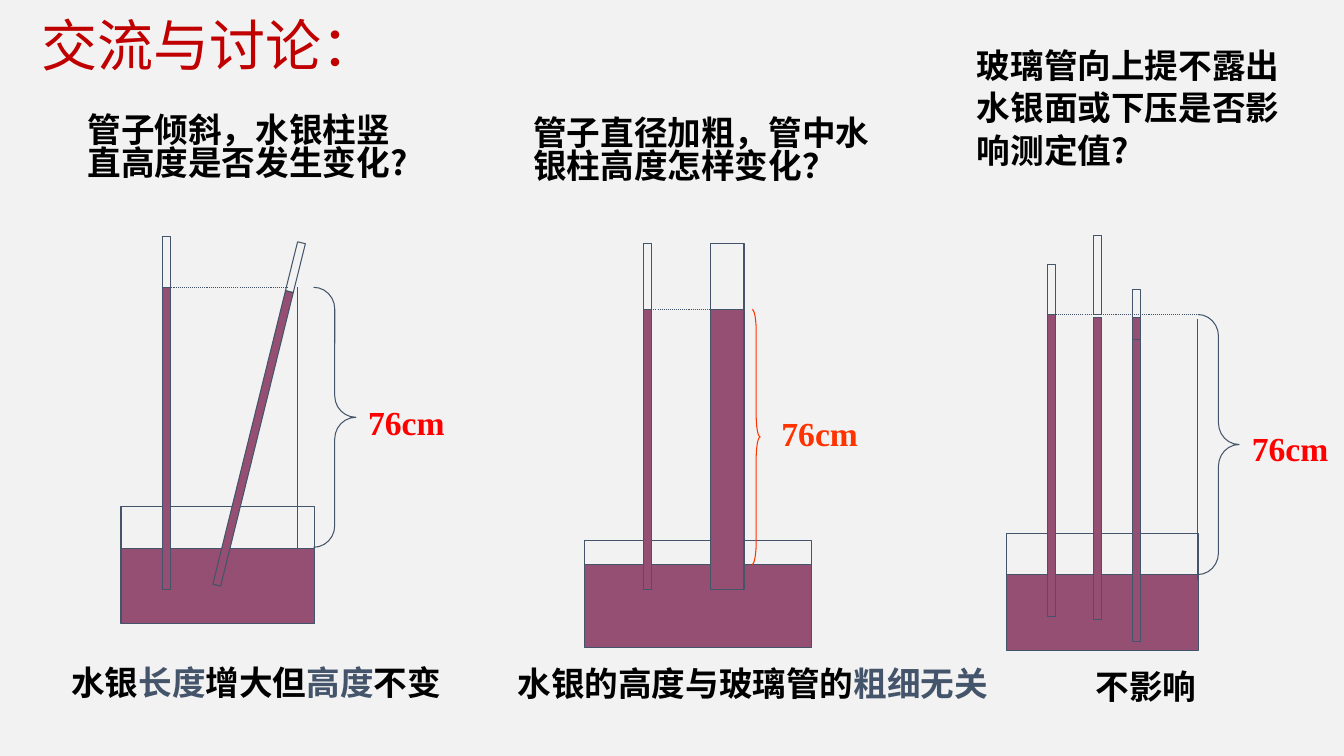
from dataclasses import dataclass
from math import cos, radians, sin

from lxml.etree import SubElement
from pptx import Presentation
from pptx.dml.color import RGBColor
from pptx.enum.dml import MSO_LINE_DASH_STYLE as Dash
from pptx.enum.shapes import MSO_CONNECTOR as Connector, MSO_SHAPE as Shape
from pptx.enum.text import MSO_ANCHOR as Anchor, MSO_AUTO_SIZE as AutoSize, PP_ALIGN as Align
from pptx.oxml.ns import qn
from pptx.util import Inches, Pt


@dataclass(frozen=True)
class Theme:
    """Colours, fonts and sizes of the slide."""
    background: str = "F2F2F2"
    mercury: str = "954F72"
    outline: str = "44546A"
    title: str = "C00000"
    text: str = "000000"
    red: str = "FF0000"
    orange: str = "FF3300"
    title_font: str = "Noto Sans CJK JP"
    body_font: str = "Noto Sans CJK SC"
    label_font: str = "Times New Roman"
    title_size: int = 40
    body_size: int = 24
    line_width: float = 0.75
    line_spacing: float = 0.82


@dataclass(frozen=True)
class Box:
    """A region in inches."""
    left: float
    top: float
    width: float
    height: float

    def inside(self, left, top, width, height):
        """Return a box placed relative to this one."""
        return Box(self.left + left, self.top + top, width, height)

    def lengths(self):
        """Return the four lengths for a shape."""
        return [Inches(value) for value in (self.left, self.top, self.width, self.height)]


THEME = Theme()


def style_run(run, color, font, size, bold):
    """Format a run for both Latin and East Asian letters."""
    run.font.size, run.font.bold, run.font.name = Pt(size), bold, font
    run.font.color.rgb = RGBColor.from_string(color)
    SubElement(run._r.get_or_add_rPr(), qn("a:ea")).set("typeface", font)


def add_text(slide, box, parts, align=Align.LEFT, font=THEME.body_font, spacing=THEME.line_spacing):
    """Add a bold text box from pairs of wording and colour."""
    frame = slide.shapes.add_textbox(*box.lengths()).text_frame
    frame.word_wrap = True
    paragraph = frame.paragraphs[0]
    paragraph.alignment, paragraph.line_spacing = align, spacing
    for wording, color in parts:
        run = paragraph.add_run()
        run.text = wording
        style_run(run, color, font, THEME.body_size, True)


def add_outline(slide, kind, box, fill=None, color=THEME.outline):
    """Add an outlined shape, filled on request."""
    shape = slide.shapes.add_shape(kind, *box.lengths())
    shape.shadow.inherit = False
    if fill:
        shape.fill.solid()
        shape.fill.fore_color.rgb = RGBColor.from_string(fill)
    else:
        shape.fill.background()
    shape.line.color.rgb = RGBColor.from_string(color)
    shape.line.width = Pt(THEME.line_width)
    return shape


def add_line(slide, box, dotted=False):
    """Add a straight line from the box's top left to its bottom right."""
    left, top, width, height = box.lengths()
    line = slide.shapes.add_connector(Connector.STRAIGHT, left, top, left + width, top + height)
    line.line.color.rgb = RGBColor.from_string(THEME.outline)
    line.line.width = Pt(THEME.line_width)
    if dotted:
        line.line.dash_style = Dash.ROUND_DOT
    SubElement(line._element.spPr, qn("a:effectLst"))


def add_trough(slide, box, rim):
    """Draw a trough whose mercury starts below an empty rim."""
    mercury = box.inside(0, rim, box.width, box.height - rim)
    add_outline(slide, Shape.RECTANGLE, mercury, THEME.mercury)
    add_outline(slide, Shape.RECTANGLE, box.inside(0, 0, box.width, rim))


def add_tube(slide, mercury, glass, gap=0, tilt=0):
    """Draw a mercury column with its empty glass above, along a tilted axis."""
    distance = (mercury.height + glass) / 2 + gap
    shift = distance * sin(radians(tilt))
    rise = mercury.height / 2 - glass / 2 - distance * cos(radians(tilt))
    empty = mercury.inside(shift, rise, mercury.width, glass)
    for box, fill in ((mercury, THEME.mercury), (empty, None)):
        add_outline(slide, Shape.RECTANGLE, box, fill).rotation = tilt


def add_height(slide, brace, label, color, brace_color=THEME.outline):
    """Draw a brace and the measured height beside it."""
    shape = add_outline(slide, Shape.RIGHT_BRACE, brace, color=brace_color)
    shape.adjustments[0] = 0.215 / brace.width
    shape.adjustments[1] = 0.5
    add_text(slide, label, [("76cm", color)], Align.CENTER, THEME.label_font, 1)


def add_title(slide, box):
    """Fill and place the title placeholder."""
    title = slide.shapes.title
    title.left, title.top, title.width, title.height = box.lengths()
    frame = title.text_frame
    frame.text = "交流与讨论："
    frame.auto_size, frame.word_wrap, frame.vertical_anchor = AutoSize.NONE, False, Anchor.TOP
    paragraph = frame.paragraphs[0]
    paragraph.alignment, paragraph.line_spacing = Align.LEFT, THEME.line_spacing
    style_run(paragraph.runs[0], THEME.title, THEME.title_font, THEME.title_size, False)


def add_tilt_panel(slide, box):
    """Show that tilting the tube keeps the height."""
    add_text(slide, box.inside(-0.43, -1.25, 3.42, 0.91),
             [("管子倾斜，水银柱竖直高度是否发生变化?", THEME.text)])
    add_trough(slide, box.inside(0, 2.67, 1.92, 1.17), 0.42)
    for left, tilt in ((0.41, 0), (1.27, 13.9)):
        add_tube(slide, box.inside(left, 0.5, 0.08, 3), 0.5, tilt=tilt)
    add_line(slide, box.inside(0.5, 0.5, 1.16, 0), dotted=True)
    add_line(slide, box.inside(1.75, 0.5, 0, 2.59))
    add_height(slide, box.inside(1.91, 0.5, 0.42, 2.58), box.inside(2.08, 1.59, 1.5, 0.5), THEME.red)
    add_text(slide, box.inside(-0.59, 4.24, 4, 0.5),
             [("水银", THEME.text), ("长度", THEME.outline), ("增大但", THEME.text),
              ("高度", THEME.outline), ("不变", THEME.text)])


def add_width_panel(slide, box):
    """Show that the tube's width does not matter."""
    add_text(slide, box.inside(-0.61, -1.29, 3.64, 0.91),
             [("管子直径加粗，管中水银柱高度怎样变化？", THEME.text)])
    add_trough(slide, box.inside(0, 2.94, 2.25, 1.06), 0.24)
    for left, width in ((0.58, 0.08), (1.25, 0.33)):
        add_tube(slide, box.inside(left, 0.65, width, 2.78), 0.65)
    add_line(slide, box.inside(0.66, 0.65, 0.59, 0), dotted=True)
    add_height(slide, box.inside(1.66, 0.65, 0.08, 2.53), box.inside(1.83, 1.63, 1, 0.5),
               THEME.orange, THEME.orange)
    add_text(slide, box.inside(-0.96, 4.18, 5.25, 0.5),
             [("水银的高度与玻璃管的", THEME.text), ("粗细无关", THEME.outline)], Align.CENTER)


def add_depth_panel(slide, box):
    """Show that raising or lowering the tube does not matter."""
    add_text(slide, box.inside(-0.39, -1.97, 3.43, 1.67),
             [("玻璃管向上提不露出水银面或下压是否影响测定值?", THEME.text)],
             spacing=1.3 * THEME.line_spacing)
    add_trough(slide, box.inside(0, 2.95, 1.91, 1.16), 0.41)
    for left, top, height, glass, gap in ((0.41, 0.78, 3, 0.5, 0), (0.87, 0.81, 3, 0.78, 0.03),
                                          (1.25, 0.81, 3.21, 0.5, -0.22)):
        add_tube(slide, box.inside(left, top, 0.08, height), glass, gap)
    add_line(slide, box.inside(1.9, 0.82, 0, 2.59))
    add_line(slide, box.inside(0.49, 0.78, 1.42, 0), dotted=True)
    add_height(slide, box.inside(1.9, 0.78, 0.41, 2.58), box.inside(2.07, 1.86, 1.49, 0.5), THEME.red)
    add_text(slide, box.inside(0.79, 4.29, 1.36, 0.5), [("不影响", THEME.text)])


def main():
    """Build and save the slide."""
    presentation = Presentation()
    presentation.slide_width, presentation.slide_height = Inches(13.33), Inches(7.5)
    slide = presentation.slides.add_slide(presentation.slide_layouts[5])
    slide.background.fill.solid()
    slide.background.fill.fore_color.rgb = RGBColor.from_string(THEME.background)
    add_title(slide, Box(0.31, 0.17, 3.53, 0.77))
    add_tilt_panel(slide, Box(1.2, 2.35, 2.33, 3.84))
    add_width_panel(slide, Box(5.8, 2.42, 2.25, 4))
    add_depth_panel(slide, Box(9.98, 2.34, 2.31, 4.11))
    presentation.save("out.pptx")


if __name__ == "__main__":
    main()
